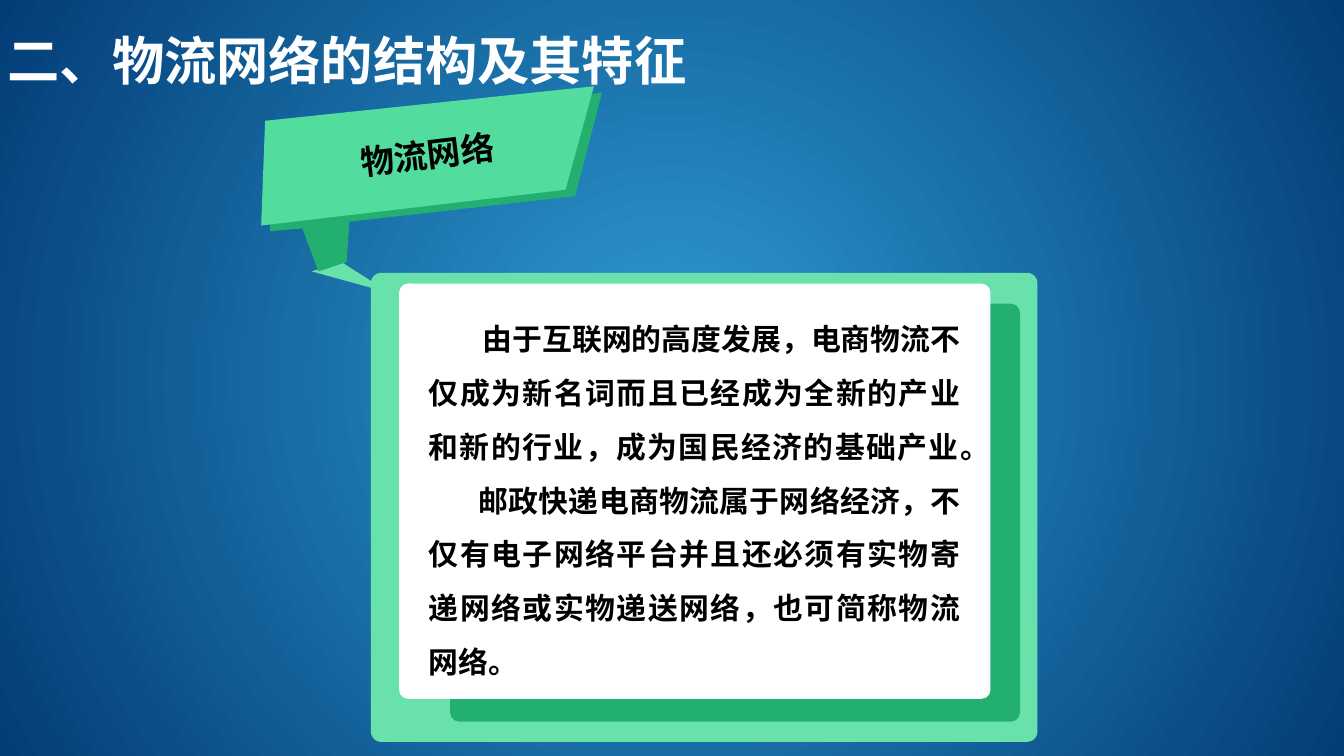
from lxml import etree
from pptx import Presentation
from pptx.dml.color import RGBColor
from pptx.enum import shapes, text
from pptx.oxml import ns
from pptx.util import Inches, Pt

WHITE = RGBColor(0xFF, 0xFF, 0xFF)
BLACK = RGBColor(0x00, 0x00, 0x00)
PALE_GREEN = RGBColor(0x69, 0xE1, 0xAB)
MID_GREEN = RGBColor(0x52, 0xDC, 0x9E)
DARK_GREEN = RGBColor(0x23, 0xAF, 0x70)
SKY = RGBColor(0x2E, 0x9B, 0xD2)
NAVY = RGBColor(0x03, 0x3D, 0x77)
LATIN = "Arial"
CJK = "Noto Sans CJK SC"

TITLE = "二、物流网络的结构及其特征"
LABEL = "物流网络"
BODY = [
    ("由于互联网的高度发展，电商物流不仅成为新名词而且已经成为全新的产业和新的行业，成为国民经济的基础产业。", 0.4),
    ("邮政快递电商物流属于网络经济，不仅有电子网络平台并且还必须有实物寄递网络或实物递送网络，也可简称物流网络。", 0.37),
]


def paint_background(slide):
    """Fill the background with a radial gradient from its centre."""
    fill = slide.background.fill
    fill.gradient()
    for stop, color, position in zip(fill.gradient_stops, (SKY, NAVY), (0, 1)):
        stop.color.rgb = color
        stop.position = position
    lin = slide.background._cSld.find(".//" + ns.qn("a:lin"))
    radial = etree.Element(ns.qn("a:path"), path="circle")
    etree.SubElement(radial, ns.qn("a:fillToRect"),
                     l="50000", t="50000", r="50000", b="50000")
    lin.getparent().replace(lin, radial)


def finish(sp, color):
    """Give a shape a flat fill without line or shadow."""
    sp.fill.solid()
    sp.fill.fore_color.rgb = color
    sp.line.fill.background()
    sp.shadow.inherit = False
    return sp


def add_polygon(slide, left, top, points, color):
    """Draw a closed outline whose points are relative to left and top."""
    corners = [(Inches(left + x), Inches(top + y)) for x, y in points]
    builder = slide.shapes.build_freeform(*corners[0])
    builder.add_line_segments(corners[1:], close=True)
    return finish(builder.convert_to_shape(), color)


def add_card(slide, left, top, width, height, color):
    """Draw a rectangle with slightly rounded corners."""
    sp = slide.shapes.add_shape(
        shapes.MSO_SHAPE.ROUNDED_RECTANGLE,
        Inches(left), Inches(top), Inches(width), Inches(height))
    sp.adjustments[0] = 0.022
    return finish(sp, color)


def set_frame(tf, side=0.0, edge=0.0):
    """Set wrapping, middle anchoring and margins of a text frame."""
    tf.word_wrap = True
    tf.vertical_anchor = text.MSO_ANCHOR.MIDDLE
    tf.margin_left = tf.margin_right = Inches(side)
    tf.margin_top = tf.margin_bottom = Inches(edge)


def write(p, words, size, color=BLACK, font=LATIN, align=text.PP_ALIGN.LEFT,
          spacing=None, indent=0):
    """Write one bold run into a paragraph."""
    p.alignment = align
    if spacing:
        p.line_spacing = Pt(spacing)
    if indent:
        p._p.get_or_add_pPr().set("indent", str(Inches(indent)))
    r = p.add_run()
    r.text = words
    r.font.size = Pt(size)
    r.font.bold = True
    r.font.name = font
    r.font.color.rgb = color
    etree.SubElement(r._r.get_or_add_rPr(), ns.qn("a:ea"), typeface=CJK)


def add_title(slide, left, top, width, height):
    """Place the slide heading."""
    sp = slide.shapes.add_textbox(
        Inches(left), Inches(top), Inches(width), Inches(height))
    set_frame(sp.text_frame, 0.1, 0.05)
    write(sp.text_frame.paragraphs[0], TITLE, 28, WHITE)


def add_banner(slide, left, top):
    """Draw the tilted label with its folded tail."""
    add_polygon(slide, left, top, [
        (0.65, 1.26), (1.01, 1.49), (0.43, 1.33)], PALE_GREEN)
    add_polygon(slide, left, top, [
        (2.59, 0), (2.39, 0.77), (0.71, 0.96), (0.69, 1.26),
        (0.48, 1.33), (0.36, 1.01), (0.12, 1.03), (0.14, 0.25)], DARK_GREEN)
    sp = add_polygon(slide, left, top + 0.07, [
        (2.58, 0.03), (2.28, 0.77), (0, 0.77), (0.12, 0)], MID_GREEN)
    sp.rotation = 353.3
    set_frame(sp.text_frame)
    write(sp.text_frame.paragraphs[0], LABEL, 18, font=CJK,
          align=text.PP_ALIGN.CENTER)


def add_panel(slide, left, top, width, height):
    """Draw the layered panel and its body text."""
    add_card(slide, left, top, width, height, PALE_GREEN)
    add_card(slide, left + 0.59, top + 0.23, width - 0.72, height - 0.38, DARK_GREEN)
    sp = add_card(slide, left + 0.21, top + 0.08, width - 0.56, height - 0.4, WHITE)
    tf = sp.text_frame
    set_frame(tf, 0.2, 0.1)
    for i, (words, indent) in enumerate(BODY):
        p = tf.add_paragraph() if i else tf.paragraphs[0]
        write(p, words, 16, align=text.PP_ALIGN.JUSTIFY, spacing=28.8, indent=indent)


def main():
    """Build and save the slide."""
    prs = Presentation()
    prs.slide_width = Inches(10)
    prs.slide_height = prs.slide_width * 9 // 16
    slide = prs.slides.add_slide(prs.slide_layouts[6])
    paint_background(slide)
    add_banner(slide, 1.89, 0.69)
    add_panel(slide, 2.76, 2.03, 4.96, 3.49)
    add_title(slide, -0.04, -0.02, 9.3, 0.93)
    prs.save("out.pptx")


if __name__ == "__main__":
    main()
